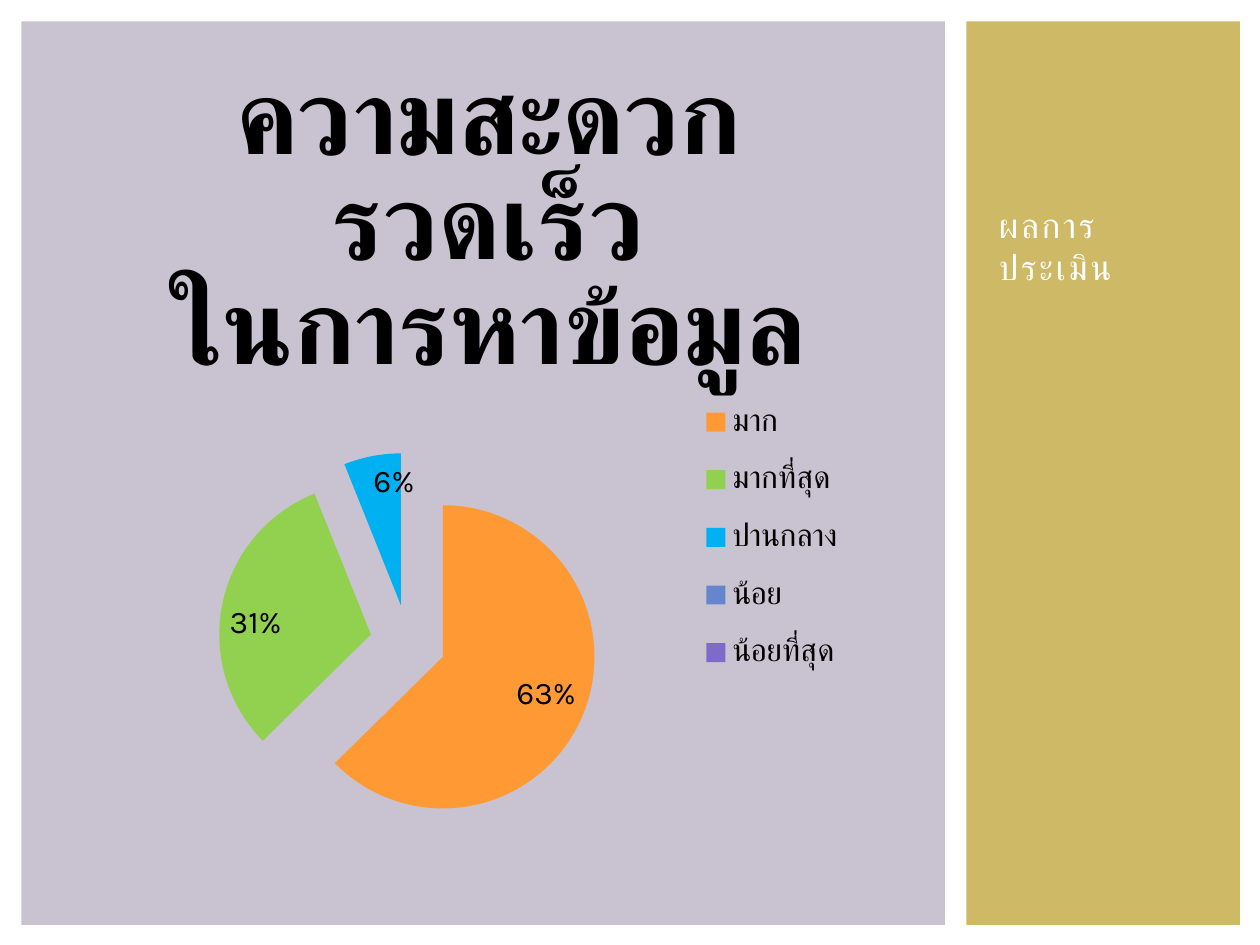
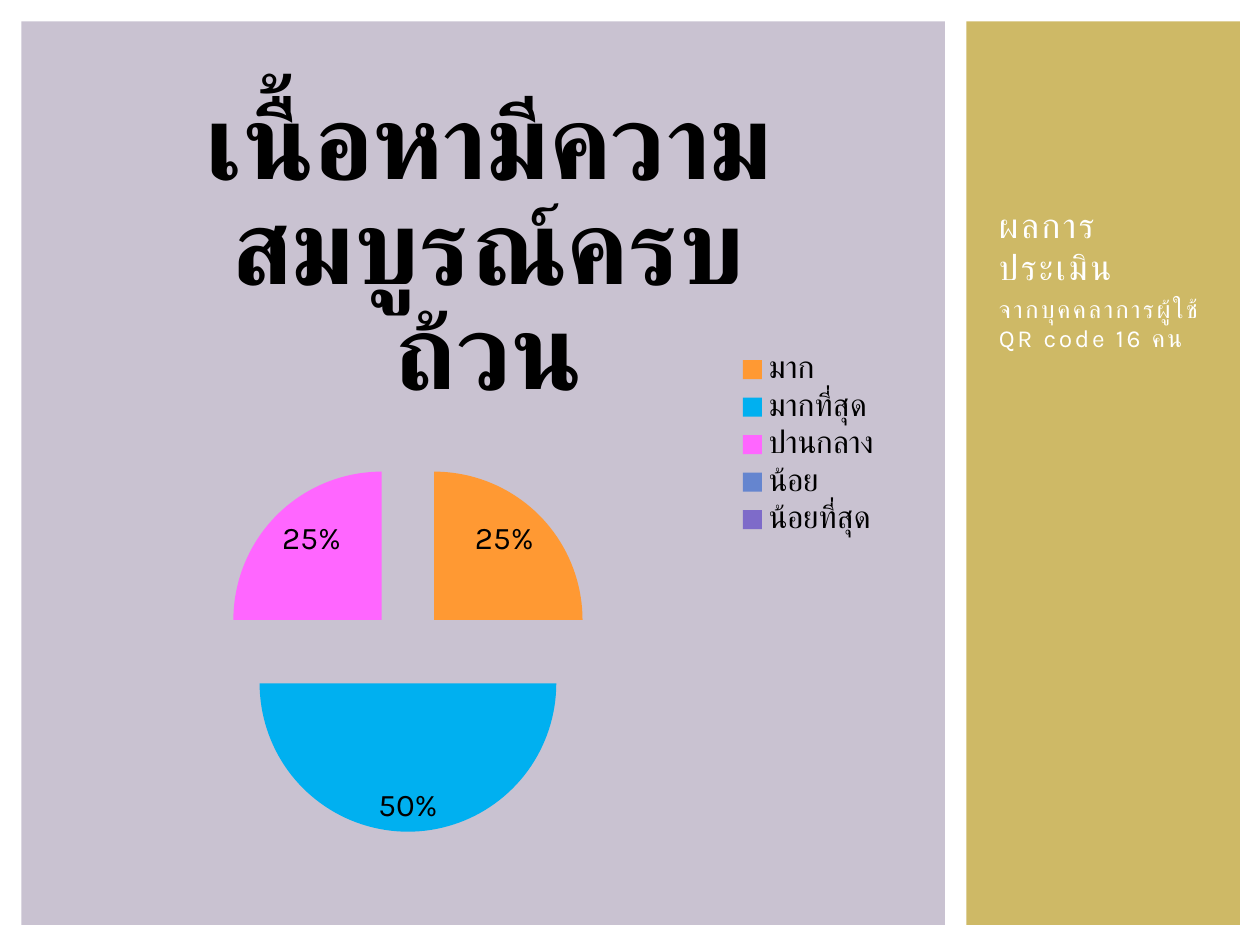
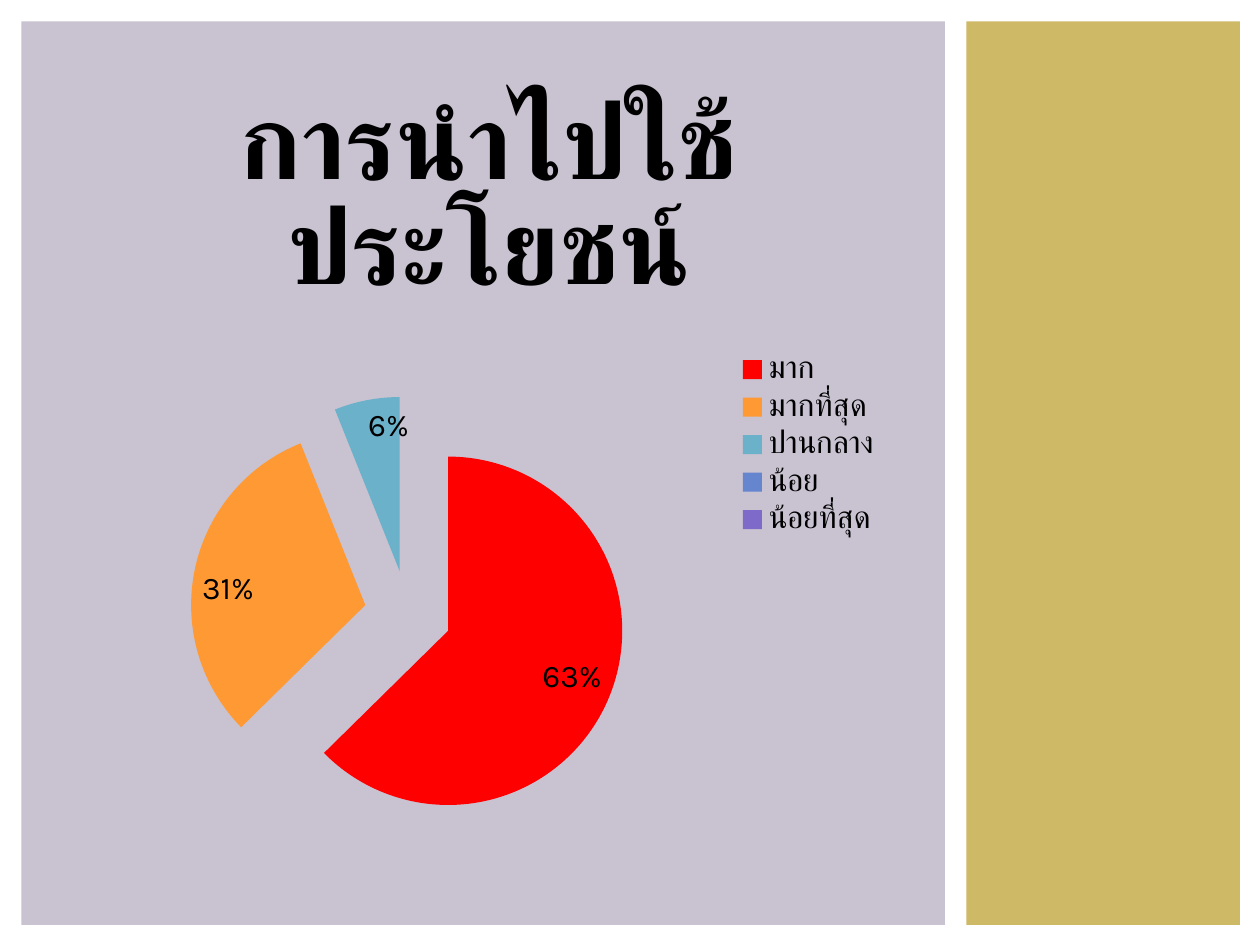
from lxml import etree
from pptx import Presentation
from pptx.chart.data import CategoryChartData
from pptx.dml.color import RGBColor
from pptx.enum import chart as ch, shapes, text
from pptx.oxml import parse_xml
from pptx.oxml.ns import nsdecls, qn
from pptx.util import Inches, Pt

# Content
FONT = "Karla"
COLORS = {"white": "FFFFFF", "black": "000000", "gold": "CEB966", "lilac": "C9C2D1",
          "orange": "FF9933", "green": "92D050", "sky": "00B0F0", "pink": "FF66FF",
          "red": "FF0000", "teal": "6BB1C9", "blue": "6585CF", "violet": "7E6BC9"}
LEVELS = ["มาก", "มากที่สุด", "ปานกลาง", "น้อย", "น้อยที่สุด"]
RESULT = "ผลการประเมิน"
UNUSED = ["blue", "violet"]  # colours of the two levels nobody chose

# pie and legend: x, y, width, height as shares of the chart
SLIDES = [
    {"heading": RESULT, "note": None, "series": "Series 1",
     "title": ["ความสะดวกรวดเร็ว", "ในการหาข้อมูล"],
     "values": [62, 31, 6, 0, 0], "colors": ["orange", "green", "sky"],
     "pie_size": 0.47, "legend": (0.75, 0.42, 0.2, 0.39)},
    {"heading": RESULT, "note": "จากบุคคลาการผู้ใช้ QR code 16 คน", "series": "Series 1",
     "title": ["เนื้อหามีความสมบูรณ์ครบถ้วน"],
     "values": [25, 50, 25, 0, 0], "colors": ["orange", "sky", "pink"],
     "pie_size": 0.46, "legend": (0.8, 0.38, 0.19, 0.24)},
    {"heading": None, "note": None, "series": "การนำไปใช้ประโยชน์",
     "title": ["การนำไปใช้ประโยชน์"],
     "values": [62, 31, 6, 0, 0], "colors": ["red", "orange", "teal"],
     "pie_size": 0.54, "legend": (0.8, 0.38, 0.19, 0.24)},
]

# Shared places, in inches
PAGE = (0, 0, 10, 7.5)
SIDE_BAND = (7.67, 0.17, 2.17, 7.17)
MAIN_PANEL = (0.17, 0.17, 7.33, 7.17)
HEADING = (7.83, 0.5, 1.83, 1.83)
NOTE = (7.83, 2.33, 1.83, 3.08)
CHART = (0.67, 0.33, 6.42, 6.4)
PIE_CENTER, PIE_BOTTOM = 0.4, 0.98


def rgb(name):
    return RGBColor.from_string(COLORS[name])


def style(font, size, color="black", bold=False):
    font.name, font.size, font.bold = FONT, Pt(size), bold
    font.color.rgb = rgb(color)


def add_band(s, box, color):
    sp = s.shapes.add_shape(shapes.MSO_SHAPE.RECTANGLE, *map(Inches, box))
    sp.shadow.inherit = False
    sp.fill.solid()
    sp.fill.fore_color.rgb = rgb(color)
    sp.line.fill.background()


def add_text(s, content, box, size, color="white", anchor=text.MSO_ANCHOR.TOP, top=0.05):
    tf = s.shapes.add_textbox(*map(Inches, box)).text_frame
    tf.word_wrap, tf.vertical_anchor, tf.margin_top = True, anchor, Inches(top)
    r = tf.paragraphs[0].add_run()
    r.text = content
    style(r.font, size, color)
    r.font._element.set("spc", "150")


def layout(x, y, w, h, inner=False):
    """Manual layout element for a part of the chart."""
    target = '<c:layoutTarget val="inner"/>' if inner else ""
    modes = "".join(f'<c:{k}Mode val="edge"/>' for k in "xy")
    sizes = "".join(f'<c:{k} val="{v:.3f}"/>' for k, v in zip("xywh", (x, y, w, h)))
    return parse_xml(f'<c:layout {nsdecls("c")}><c:manualLayout>{target}{modes}{sizes}'
                     '</c:manualLayout></c:layout>')


def add_title(chart, lines):
    tf = chart.chart_title.text_frame
    for i, line in enumerate(lines):
        p = tf.add_paragraph() if i else tf.paragraphs[0]
        r = p.add_run()
        r.text = line
        style(r.font, 60, bold=True)
    chart.chart_title.include_in_layout = False


def add_labels(plot, values):
    plot.has_data_labels = True
    labels = plot.data_labels
    labels.show_percentage, labels.show_value = True, False
    labels.number_format, labels.number_format_is_linked = "0%", False
    labels.position = ch.XL_LABEL_POSITION.INSIDE_END
    style(labels.font, 18)
    # Series labels, with those of empty slices removed
    ser_labels = plot.series[0].data_labels._element
    ser_labels.getparent().replace(ser_labels, labels._element)
    empty = [i for i, v in enumerate(values) if not v]
    for pos, i in enumerate(empty):
        labels._element.insert(pos, parse_xml(
            f'<c:dLbl {nsdecls("c")}><c:idx val="{i}"/><c:delete val="1"/></c:dLbl>'))


def add_pie(s, data):
    cd = CategoryChartData()
    cd.categories = LEVELS
    cd.add_series(data["series"], data["values"])
    chart = s.shapes.add_chart(ch.XL_CHART_TYPE.PIE, *map(Inches, CHART), cd).chart
    style(chart.font, 18)
    add_title(chart, data["title"])

    # Slices
    plot = chart.plots[0]
    plot.vary_by_categories = True
    ser = plot.series[0]
    for i, color in enumerate(data["colors"] + UNUSED):
        fill = ser.points[i].format.fill
        fill.solid()
        fill.fore_color.rgb = rgb(color)
    explosion = etree.Element(qn("c:explosion"), val="25")
    ser._element.find(qn("c:dPt")).addprevious(explosion)
    add_labels(plot, data["values"])

    # Pie and legend places
    size = data["pie_size"]
    area = chart._chartSpace.chart.plotArea
    for old in area.findall(qn("c:layout")):
        area.remove(old)
    area.insert(0, layout(PIE_CENTER - size / 2, PIE_BOTTOM - size, size, size, inner=True))
    chart.has_legend = True
    legend = chart.legend
    legend.position, legend.include_in_layout = ch.XL_LEGEND_POSITION.RIGHT, False
    style(legend.font, 18)
    for old in legend._element.findall(qn("c:layout")):
        legend._element.remove(old)
    legend._element.find(qn("c:legendPos")).addnext(layout(*data["legend"]))


def main():
    prs = Presentation()
    prs.slide_width, prs.slide_height = Inches(10), Inches(7.5)
    for data in SLIDES:
        s = prs.slides.add_slide(prs.slide_layouts[6])
        s.background.fill.solid()
        s.background.fill.fore_color.rgb = rgb("lilac")
        for box, color in ((PAGE, "white"), (SIDE_BAND, "gold"), (MAIN_PANEL, "lilac")):
            add_band(s, box, color)
        if data["note"]:
            add_text(s, data["note"], NOTE, 14, top=0)
        if data["heading"]:
            add_text(s, data["heading"], HEADING, 20, anchor=text.MSO_ANCHOR.BOTTOM)
        add_pie(s, data)
    prs.save("out.pptx")


if __name__ == "__main__":
    main()
